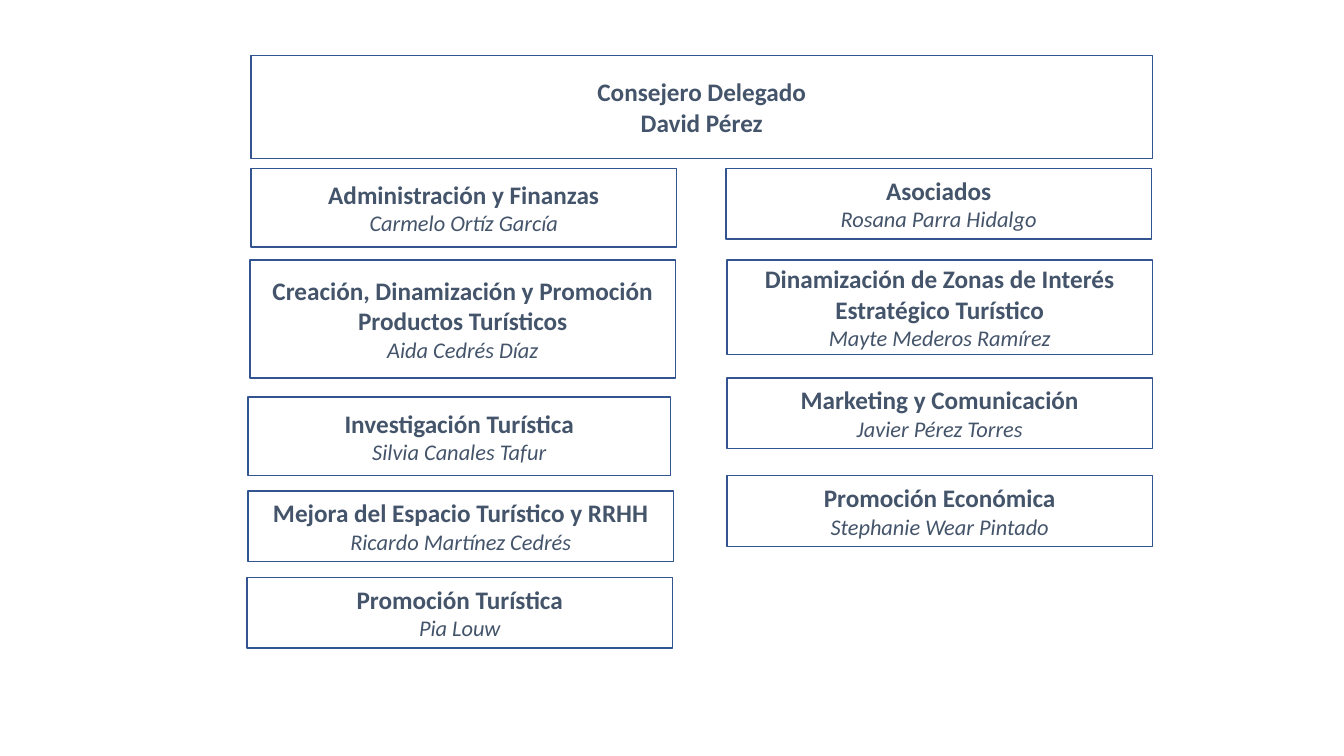
from pptx import Presentation
from pptx.dml.color import RGBColor
from pptx.enum.shapes import MSO_SHAPE
from pptx.enum.text import MSO_ANCHOR, PP_ALIGN
from pptx.util import Inches, Pt


def rgb(value):
    return RGBColor.from_string(value)


class OrgChart:
    font = "Calibri"
    ink = "44546A"
    border = "325491"
    role_size = 18
    name_size = 16

    def __init__(self, slide):
        self.s = slide

    def line(self, p, text, size, bold, italic):
        p.text = text
        p.alignment = PP_ALIGN.CENTER
        p.font.name = self.font
        p.font.size = Pt(size)
        p.font.bold = bold
        p.font.italic = italic
        p.font.color.rgb = rgb(self.ink)

    def box(self, left, top, width, height):
        sp = self.s.shapes.add_shape(
            MSO_SHAPE.RECTANGLE, Inches(left), Inches(top), Inches(width), Inches(height))
        sp.shadow.inherit = False
        sp.fill.background()
        sp.line.color.rgb = rgb(self.border)
        sp.line.width = Pt(1)
        tf = sp.text_frame
        tf.word_wrap = True
        tf.vertical_anchor = MSO_ANCHOR.MIDDLE
        return tf

    def director(self, role, name, left, top, width, height):
        tf = self.box(left, top, width, height)
        self.line(tf.paragraphs[0], role, self.role_size, True, False)
        self.line(tf.add_paragraph(), name, self.role_size, True, False)

    def area(self, role, name, left, top, width=4.22, height=0.7):
        tf = self.box(left, top, width, height)
        self.line(tf.paragraphs[0], role, self.role_size, True, False)
        self.line(tf.add_paragraph(), name, self.name_size, False, True)


def main():
    prs = Presentation()
    prs.slide_width = Inches(13.33)
    prs.slide_height = Inches(7.5)
    chart = OrgChart(prs.slides.add_slide(prs.slide_layouts[6]))

    chart.director("Consejero Delegado", "David Pérez", 2.49, 0.55, 8.94, 1.02)

    chart.area("Administración y Finanzas", "Carmelo Ortíz García", 2.49, 1.67, height=0.78)
    chart.area("Creación, Dinamización y Promoción Productos Turísticos",
               "Aida Cedrés Díaz", 2.48, 2.58, height=1.17)
    chart.area("Investigación Turística", "Silvia Canales Tafur", 2.46, 3.94, 4.19, 0.78)
    chart.area("Mejora del Espacio Turístico y RRHH", "Ricardo Martínez Cedrés", 2.46, 4.87)
    chart.area("Promoción Turística", "Pia Louw", 2.45, 5.73)

    chart.area("Asociados", "Rosana Parra Hidalgo", 7.2, 1.67)
    chart.area("Dinamización de Zonas de Interés Estratégico Turístico",
               "Mayte Mederos Ramírez", 7.21, 2.58, height=0.94)
    chart.area("Marketing y Comunicación", "Javier Pérez Torres", 7.21, 3.75)
    chart.area("Promoción Económica", "Stephanie Wear Pintado", 7.21, 4.72)

    prs.save("out.pptx")


if __name__ == "__main__":
    main()
